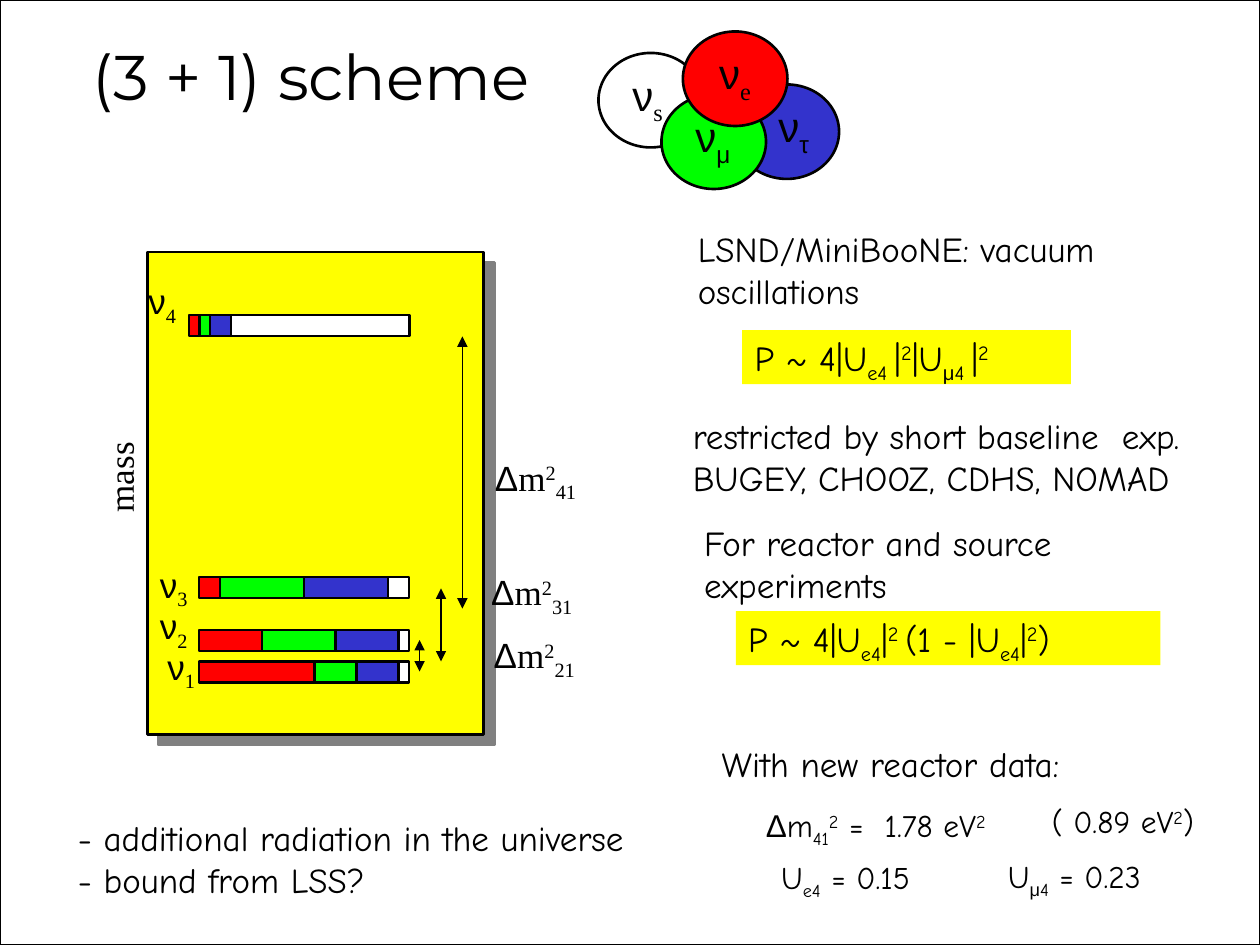
from lxml import etree
from pptx import Presentation
from pptx.dml.color import RGBColor
from pptx.enum.shapes import MSO_CONNECTOR, MSO_SHAPE
from pptx.enum.text import MSO_AUTO_SIZE, PP_ALIGN
from pptx.oxml.ns import qn
from pptx.util import Inches, Pt

RECT, OVAL = MSO_SHAPE.RECTANGLE, MSO_SHAPE.OVAL
STRAIGHT = MSO_CONNECTOR.STRAIGHT
FIT, NO_FIT = MSO_AUTO_SIZE.SHAPE_TO_FIT_TEXT, MSO_AUTO_SIZE.NONE
LEFT, CENTER = PP_ALIGN.LEFT, PP_ALIGN.CENTER

COLORS = {
    "black": "000000", "white": "FFFFFF", "yellow": "FFFF00", "red": "FF0000",
    "green": "00FF00", "blue": "3333CC", "grey": "808080",
}
BODY, SERIF, GREEK, TITLE = "Comic Neue", "Times New Roman", "Arial", "Montserrat"
SUB, SUP = -25000, 30000
UNIT = 1 / 12  # grid step of the mass bars, in inches


def color(name):
    return RGBColor.from_string(COLORS[name])


class SlideBuilder:
    """Holds the text style and the slide being drawn."""

    def __init__(self, slide, font=BODY, size=20):
        self.slide, self.font, self.size = slide, font, size

    def shape(self, kind, x, y, w, h, fill, line=1.5):
        s = self.slide.shapes.add_shape(kind, Inches(x), Inches(y), Inches(w), Inches(h))
        s.shadow.inherit = False
        s.fill.solid()
        s.fill.fore_color.rgb = color(fill)
        s.line.color.rgb = color("black")
        s.line.width = Pt(line)
        return s

    def drop_shadow(self, s):
        effects = s._element.spPr.find(qn("a:effectLst"))
        shadow = etree.SubElement(effects, qn("a:outerShdw"), dist=str(Pt(8.5)),
                                  dir="2700000", algn="ctr", rotWithShape="0")
        etree.SubElement(shadow, qn("a:srgbClr"), val=COLORS["grey"])

    def text(self, x, y, w, h, *lines, font=None, size=None, align=LEFT,
             fill=None, wrap=False, fit=FIT, rotation=0):
        """Each line is a list of runs: plain strings or (text, baseline) pairs."""
        sp = self.slide.shapes.add_textbox(Inches(x), Inches(y), Inches(w), Inches(h))
        sp.rotation = rotation
        if fill:
            sp.fill.solid()
            sp.fill.fore_color.rgb = color(fill)
        tf = sp.text_frame
        tf.word_wrap = wrap
        tf.auto_size = fit
        for i, line in enumerate(lines):
            p = tf.add_paragraph() if i else tf.paragraphs[0]
            p.alignment = align
            for run in line:
                content, baseline = (run, 0) if isinstance(run, str) else run
                r = p.add_run()
                r.text = content
                r.font.name = GREEK if content in "νμτΔ" else font or self.font
                r.font.size = Pt(size or self.size)
                r.font.color.rgb = color("black")
                if baseline:
                    r._r.get_or_add_rPr().set("baseline", str(baseline))

    def bar(self, x, y, parts):
        """Draws a row of flavour shares, each given in grid units."""
        for fill, units in zip(("red", "green", "blue", "white"), parts):
            self.shape(RECT, x, y, units * UNIT, 2 * UNIT, fill)
            x += units * UNIT

    def double_arrow(self, x, top, bottom):
        c = self.slide.shapes.add_connector(
            STRAIGHT, Inches(x), Inches(top), Inches(x), Inches(bottom))
        c.line.color.rgb = color("black")
        c.line.width = Pt(0.75)
        ln = c._element.spPr.find(qn("a:ln"))
        for end in ("a:headEnd", "a:tailEnd"):
            etree.SubElement(ln, qn(end), type="triangle")
        etree.SubElement(c._element.spPr, qn("a:effectLst"))


def main():
    prs = Presentation()
    prs.slide_width, prs.slide_height = Inches(10), Inches(7.5)
    b = SlideBuilder(prs.slides.add_slide(prs.slide_layouts[6]))

    # Page frame and title
    b.shape(RECT, 0, 0, 10, 7.5, "white", 0.75)
    b.text(0.33, 0.25, 4.28, 1.17, ["(3 + 1) scheme"], font=TITLE, size=36,
           align=CENTER, fit=NO_FIT)

    # Overlapping flavour circles, then their labels
    for x, y, fill in ((4.75, 0.42, "white"), (5.83, 0.67, "blue"),
                       (5.25, 0.75, "green"), (5.42, 0.25, "red")):
        b.shape(OVAL, x, y, 0.83, 0.75, fill)
    for x, y, w, flavour in ((5.42, 0.83, 0.52, "μ"), (6.08, 0.75, 0.47, "τ"),
                             (5.61, 0.33, 0.47, "e"), (4.92, 0.5, 0.47, "s")):
        b.text(x, y, w, 0.5, ["ν", (flavour, SUB)], font=SERIF, size=24)

    # Mass spectrum panel
    b.drop_shadow(b.shape(RECT, 1.17, 2, 2.67, 3.83, "yellow"))
    b.text(0.57, 3.57, 0.76, 0.43, ["mass"], font=SERIF, rotation=270)

    # Mass states: label position, bar position, flavour shares
    for state, label_x, label_y, x, y, parts in (
            ("4", 1.08, 2.17, 1.5, 2.5, (1, 1, 2, 17)),
            ("3", 1.17, 4.42, 1.58, 4.58, (2, 8, 8, 2)),
            ("2", 1.17, 4.75, 1.58, 5, (6, 7, 6, 1)),
            ("1", 1.23, 5.07, 1.58, 5.25, (11, 4, 4, 1))):
        b.bar(x, y, parts)
        b.text(label_x, label_y, 0.44, 0.43, ["ν", (state, SUB)], font=SERIF)

    # Mass splittings
    for pair, label_x, label_y, x, top, bottom in (
            ("41", 3.83, 3.57, 3.67, 2.67, 4.83),
            ("31", 3.8, 4.48, 3.5, 4.67, 5.25),
            ("21", 3.82, 4.98, 3.33, 5.08, 5.33)):
        b.double_arrow(x, top, bottom)
        b.text(label_x, label_y, 0.86, 0.43,
               ["Δ", "m", ("2", SUP), (pair, SUB)], font=SERIF)

    # Oscillation formulas
    b.text(5.44, 1.76, 3.73, 0.77, ["LSND/MiniBooNE: vacuum"], ["oscillations"])
    b.text(5.89, 2.62, 2.61, 0.43,
           ["P ~ 4|U", ("e4 ", SUB), "|", ("2", SUP), "|U", ("μ", SUB),
            ("4 ", SUB), "|", ("2", SUP)], fill="yellow", wrap=True)
    b.text(5.4, 3.24, 4.7, 0.77, ["restricted by short baseline  exp."],
           ["BUGEY, CHOOZ, CDHS, NOMAD"])
    b.text(5.84, 4.85, 3.37, 0.43,
           ["P ~ 4|U", ("e4", SUB), "|", ("2 ", SUP), "(1 - |U", ("e4", SUB),
            "|", ("2", SUP), ")"], fill="yellow", wrap=True)
    b.text(5.49, 4.09, 3.3, 0.77, ["For reactor and source"], ["experiments"])

    # Fit values
    b.text(5.63, 5.84, 3.27, 0.44, ["With new reactor data:"])
    b.text(5.98, 6.35, 2.27, 0.4,
           ["Δ", "m", ("41", SUB), ("2", SUP), " =  1.78 eV", ("2", SUP)],
           size=18, wrap=True)
    b.text(8.25, 6.32, 1.59, 0.4, ["( 0.89 eV", ("2", SUP), ")"], size=18, wrap=True)
    b.text(6.1, 6.76, 1.49, 0.4, ["U", ("e4", SUB), " = 0.15"], size=18)
    b.text(7.9, 6.75, 1.38, 0.4, ["U", ("μ", SUB), ("4", SUB), " = 0.23"], size=18)

    # Cosmology remarks
    b.text(0.52, 6.43, 4.9, 0.77, ["- additional radiation in the universe"],
           ["- bound from LSS?"], fill="white")

    prs.save("out.pptx")


if __name__ == "__main__":
    main()
